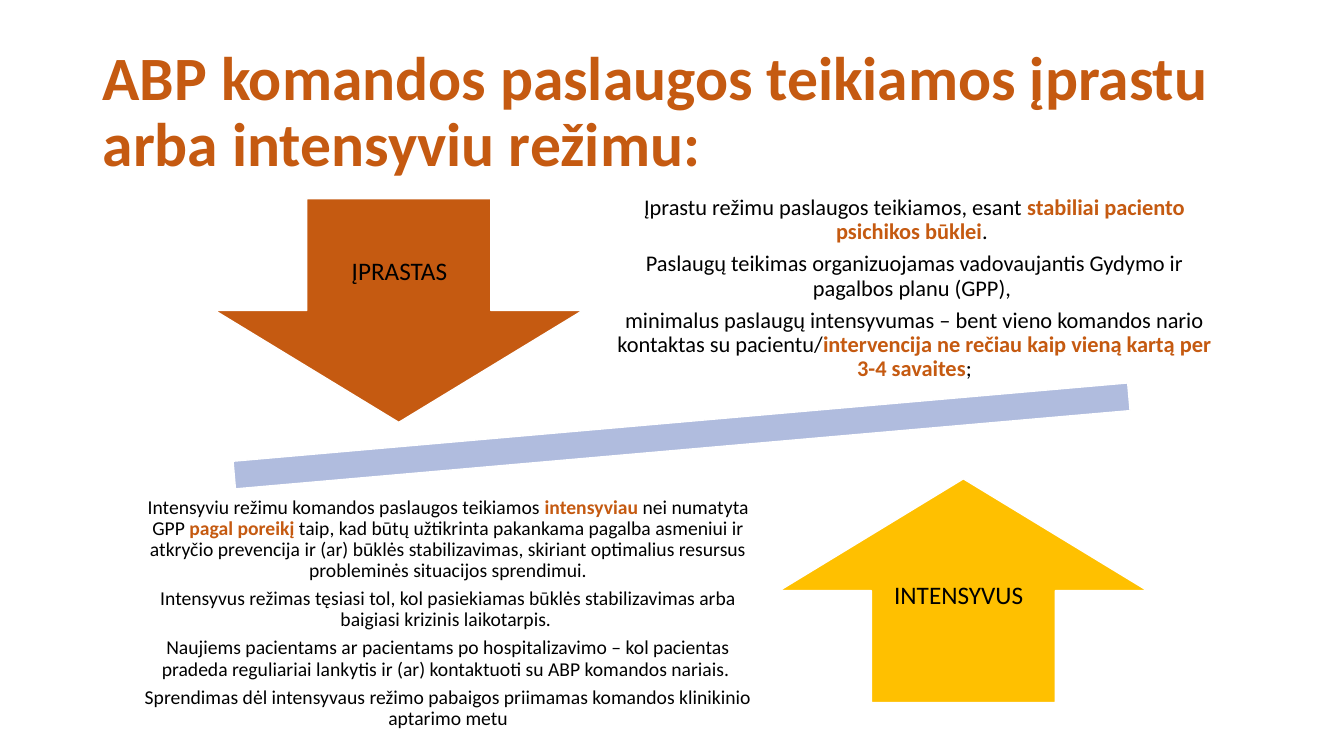
import pptx
import pptx.util
import pptx.dml.color
import pptx.enum.shapes
import pptx.enum.text

Inches, Pt = pptx.util.Inches, pptx.util.Pt
Kind = pptx.enum.shapes.MSO_SHAPE
Align = pptx.enum.text.PP_ALIGN
Anchor = pptx.enum.text.MSO_ANCHOR

HUES = {"rust": "C55A11", "gold": "FFC000", "bar": "B0BCDE",
        "ink": "000000", "edge": "FFFFFF"}

TITLE = "ABP komandos paslaugos teikiamos įprastu arba intensyviu režimu:"

USUAL = [
    ["Įprastu režimu paslaugos teikiamos, esant ",
     "stabiliai paciento psichikos būklei", ". "],
    ["Paslaugų teikimas organizuojamas vadovaujantis Gydymo ir pagalbos planu (GPP), "],
    ["minimalus paslaugų intensyvumas – bent vieno komandos nario kontaktas su pacientu/",
     "intervencija ne rečiau kaip vieną kartą per 3-4 savaites", ";"],
]

INTENSE = [
    ["Intensyviu režimu komandos paslaugos teikiamos ", "intensyviau",
     " nei numatyta GPP ", "pagal poreikį ",
     "taip, kad būtų užtikrinta pakankama pagalba asmeniui ir atkryčio prevencija "
     "ir (ar) būklės stabilizavimas, skiriant optimalius resursus probleminės "
     "situacijos sprendimui."],
    ["Intensyvus režimas tęsiasi tol, kol pasiekiamas būklės stabilizavimas "
     "arba baigiasi krizinis laikotarpis. "],
    ["Naujiems pacientams ar pacientams po hospitalizavimo – kol pacientas pradeda "
     "reguliariai lankytis ir (ar) kontaktuoti su ABP komandos nariais. "],
    ["Sprendimas dėl intensyvaus režimo pabaigos priimamas komandos klinikinio "
     "aptarimo metu"],
]

SHAPES = [
    (Kind.MATH_MINUS, (0.7, 3.74, 12.12, 1.17), "bar", 355),
    (Kind.DOWN_ARROW, (2.13, 1.97, 3.65, 2.22), "rust", 0),
    (Kind.UP_ARROW, (7.73, 4.75, 3.65, 2.22), "gold", 0),
]

BODIES = [
    (USUAL, (6, 1.7, 6.14, 2.33), 16, 0.12),
    (INTENSE, (1.28, 4.92, 6.33, 2.33), 14, 0.11),
]

LABELS = [
    ("ĮPRASTAS", (3.39, 2.48, 1.36, 0.4)),
    ("INTENSYVUS", (8.77, 5.7, 1.55, 0.4)),
]


def hue(name):
    return pptx.dml.color.RGBColor.from_string(HUES[name])


def style(para, size, color=None, bold=None):
    para.font.name = "Calibri"
    para.font.size = Pt(size)
    para.font.bold = bold
    if color:
        para.font.color.rgb = hue(color)


def add_box(slide, area):
    frame = slide.shapes.add_textbox(*map(Inches, area)).text_frame
    frame.word_wrap = True
    return frame


def add_line(slide, text, area, size, color, bold=None):
    frame = add_box(slide, area)
    para = frame.paragraphs[0]
    para.text = text
    style(para, size, color, bold)
    return frame


def add_shape(slide, kind, area, color, turn):
    shape = slide.shapes.add_shape(kind, *map(Inches, area))
    shape.rotation = turn
    shape.shadow.inherit = False
    shape.fill.solid()
    shape.fill.fore_color.rgb = hue(color)
    shape.line.color.rgb = hue("edge")
    shape.line.width = Pt(1)


def add_body(slide, paras, area, size, pad):
    frame = add_box(slide, area)
    frame.vertical_anchor = Anchor.MIDDLE
    frame.margin_left = frame.margin_right = Inches(pad)
    frame.margin_top = frame.margin_bottom = Inches(pad)
    for row, parts in enumerate(paras):
        para = frame.add_paragraph() if row else frame.paragraphs[0]
        para.alignment = Align.CENTER
        para.line_spacing = 0.9
        para.space_after = Pt(size * 0.35)
        style(para, size)
        for spot, part in enumerate(parts):
            run = para.add_run()
            run.text = part
            strong = spot % 2 == 1
            run.font.bold = strong
            run.font.color.rgb = hue("rust" if strong else "ink")


def main():
    deck = pptx.Presentation()
    deck.slide_width, deck.slide_height = Inches(13.33), Inches(7.5)
    slide = deck.slides.add_slide(deck.slide_layouts[6])
    head = add_line(slide, TITLE, (0.92, 0.4, 11.5, 1.45), 44, "rust", True)
    head.vertical_anchor = Anchor.MIDDLE
    head.paragraphs[0].line_spacing = 0.9
    for item in SHAPES:
        add_shape(slide, *item)
    for item in BODIES:
        add_body(slide, *item)
    for text, area in LABELS:
        add_line(slide, text, area, 18, "ink")
    deck.save("out.pptx")


if __name__ == "__main__":
    main()
